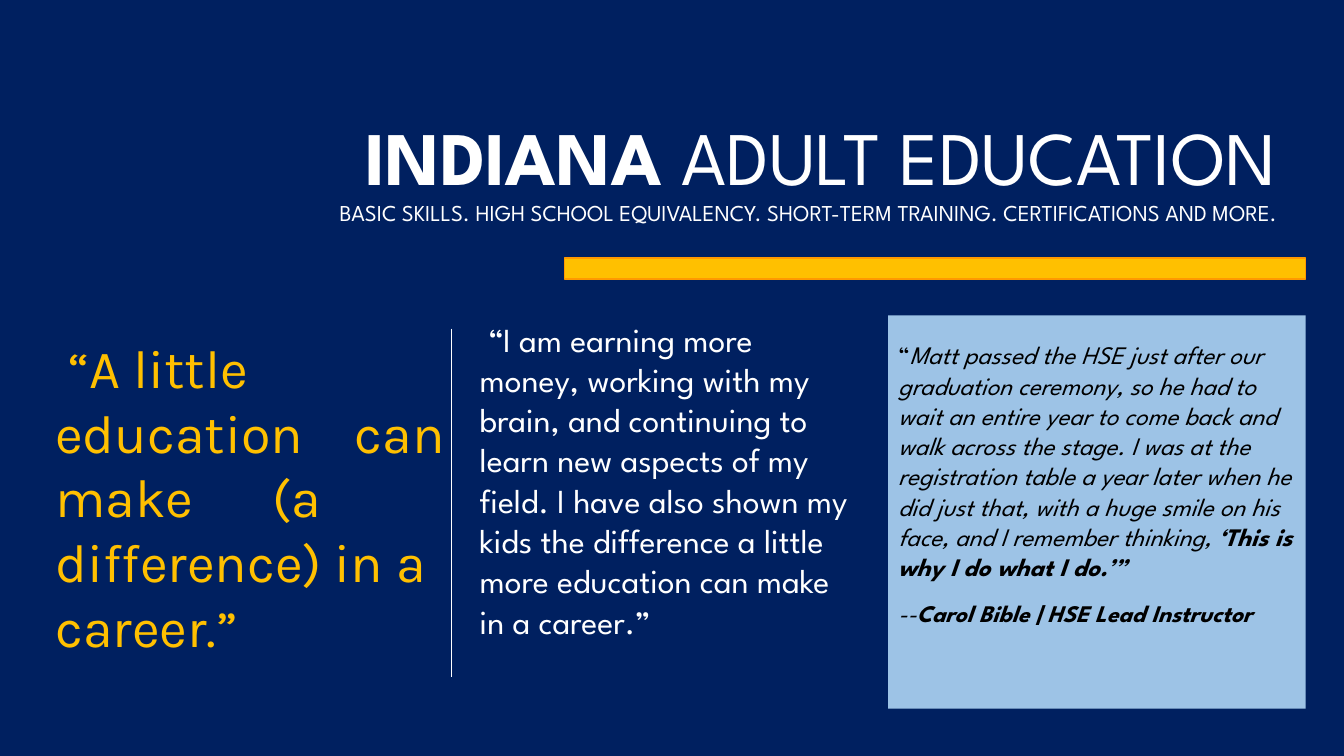
from lxml import etree
from pptx import Presentation
from pptx.dml.color import RGBColor
from pptx.enum.shapes import MSO_CONNECTOR, MSO_SHAPE
from pptx.enum.text import MSO_ANCHOR, PP_ALIGN
from pptx.oxml.ns import qn
from pptx.util import Inches, Pt

RECTANGLE = MSO_SHAPE.RECTANGLE
STRAIGHT = MSO_CONNECTOR.STRAIGHT
TOP, MIDDLE = MSO_ANCHOR.TOP, MSO_ANCHOR.MIDDLE
LEFT, RIGHT = PP_ALIGN.LEFT, PP_ALIGN.RIGHT

NAVY, WHITE, BLACK = "002060", "FFFFFF", "000000"
GOLD, ORANGE, LIGHT_BLUE = "FFC000", "FF9900", "9DC3E6"
SPARTAN, KARLA = "League Spartan", "Karla"


def color(value):
    return RGBColor.from_string(value)


def set_font(paragraph, name, size, fill):
    paragraph.font.name = name
    paragraph.font.size = Pt(size)
    paragraph.font.color.rgb = color(fill)


def add_run(paragraph, text, bold=None, italic=None, size=None):
    run = paragraph.add_run()
    run.text = text
    run.font.bold = bold
    run.font.italic = italic
    if size:
        run.font.size = Pt(size)


def add_text_box(slide, left, top, width, height):
    box = slide.shapes.add_textbox(
        Inches(left), Inches(top), Inches(width), Inches(height))
    box.text_frame.word_wrap = True
    return box.text_frame


def add_rectangle(slide, left, top, width, height, fill, outline=None):
    shape = slide.shapes.add_shape(
        RECTANGLE, Inches(left), Inches(top), Inches(width), Inches(height))
    shape.shadow.inherit = False
    shape.fill.solid()
    shape.fill.fore_color.rgb = color(fill)
    if outline:
        shape.line.color.rgb = color(outline)
        shape.line.width = Pt(1)
    else:
        shape.line.fill.background()
    return shape


def add_divider(slide, x, top, bottom):
    line = slide.shapes.add_connector(
        STRAIGHT, Inches(x), Inches(top), Inches(x), Inches(bottom))
    line.line.color.rgb = color(WHITE)
    line.line.width = Pt(0.75)
    etree.SubElement(line._element.spPr, qn("a:effectLst"))


def add_tab_stops(paragraph, positions):
    properties = paragraph._p.get_or_add_pPr()
    tabs = etree.Element(qn("a:tabLst"))
    for position in positions:
        etree.SubElement(tabs, qn("a:tab"), pos=str(Inches(position)), algn="l")
    properties.insert(0, tabs)


def add_title(slide):
    frame = add_text_box(slide, 1.77, 1.13, 10.99, 1.41)
    frame.vertical_anchor = MIDDLE
    frame.margin_bottom = Inches(0.29)
    paragraph = frame.paragraphs[0]
    paragraph.alignment = RIGHT
    paragraph.line_spacing = 0.9
    set_font(paragraph, SPARTAN, 54, WHITE)
    add_run(paragraph, "INDIANA", bold=True)
    add_run(paragraph, " ADULT EDUCATION")
    paragraph.add_line_break()
    add_run(paragraph, "BASIC SKILLS. HIGH SCHOOL EQUIVALENCY. SHORT-TERM TRAINING. "
            "CERTIFICATIONS AND MORE.", size=16.2)


def add_quote(slide, box, text, font, size, fill):
    paragraph = add_text_box(slide, *box).paragraphs[0]
    set_font(paragraph, font, size, fill)
    add_run(paragraph, text)
    return paragraph


def add_instructor_panel(slide):
    frame = add_rectangle(slide, 8.81, 3.13, 4.14, 3.9, LIGHT_BLUE).text_frame
    frame.word_wrap = True
    frame.vertical_anchor = TOP
    frame.margin_top = Inches(0.24)
    story, credit = frame.paragraphs[0], frame.add_paragraph()
    for paragraph, size in ((story, 18), (credit, 17)):
        paragraph.alignment = LEFT
        set_font(paragraph, SPARTAN, size, BLACK)
    add_run(story, "“")
    add_run(story, "Matt passed the HSE just after our graduation ceremony, so he had "
            "to wait an entire year to come back and walk across the stage. I was at "
            "the registration table a year later when he did just that, with a huge "
            "smile on his face, and I remember thinking, ", italic=True)
    add_run(story, "‘This is why I do what I do.’”", bold=True, italic=True)
    credit.space_before = Pt(12)
    add_run(credit, "--", italic=True)
    add_run(credit, "Carol Bible | HSE Lead Instructor", bold=True, italic=True)


def main():
    presentation = Presentation()
    presentation.slide_width = Inches(13.33)
    presentation.slide_height = Inches(7.5)
    slide = presentation.slides.add_slide(presentation.slide_layouts[6])
    slide.background.fill.solid()
    slide.background.fill.fore_color.rgb = color(NAVY)

    add_title(slide)
    add_rectangle(slide, 5.6, 2.56, 7.35, 0.21, GOLD, ORANGE)
    add_quote(slide, (4.66, 3.11, 3.97, 4.04),
              " “I am earning more money, working with my brain, and continuing to "
              "learn new aspects of my field. I have also shown my kids the difference "
              "a little more education can make in a career.”", SPARTAN, 24, WHITE)
    motto = add_quote(slide, (0.45, 3.27, 4.21, 3.34),
                      " “A little education\tcan make\t(a difference) in a career.”",
                      KARLA, 38.5, GOLD)
    add_tab_stops(motto, (2.15, 2.97))
    add_instructor_panel(slide)
    add_divider(slide, 4.48, 3.26, 6.72)

    presentation.save("out.pptx")


if __name__ == "__main__":
    main()
